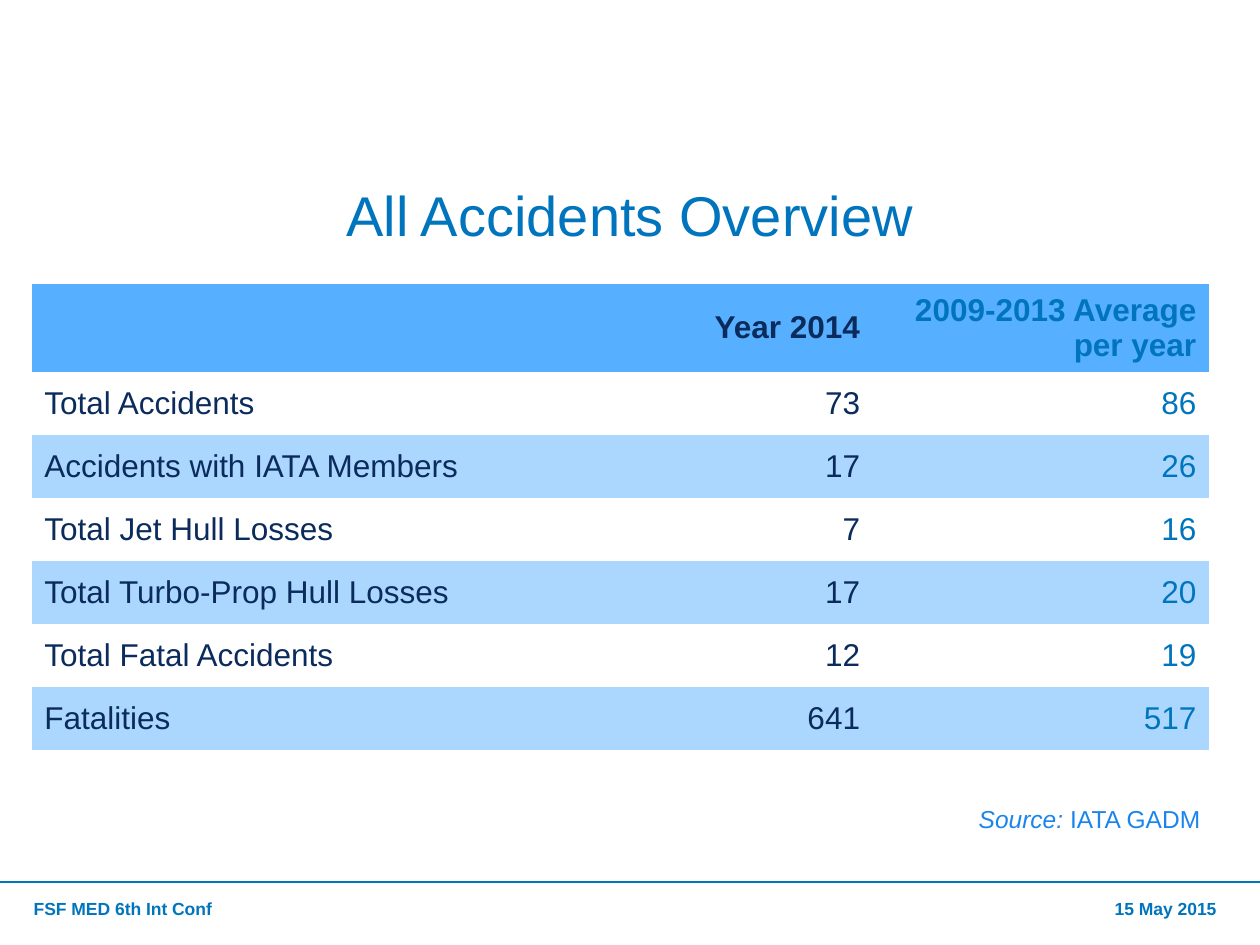
from pptx import Presentation
from pptx.dml.color import RGBColor
from pptx.enum.shapes import MSO_CONNECTOR
from pptx.enum.text import MSO_ANCHOR, PP_ALIGN
from pptx.oxml.ns import qn
from pptx.util import Cm, Pt
from lxml import etree

LEFT, CENTER, RIGHT = PP_ALIGN.LEFT, PP_ALIGN.CENTER, PP_ALIGN.RIGHT
TOP, MIDDLE = MSO_ANCHOR.TOP, MSO_ANCHOR.MIDDLE
STRAIGHT = MSO_CONNECTOR.STRAIGHT

BLUE = RGBColor(0x00, 0x75, 0xBD)
NAVY = RGBColor(0x0B, 0x2B, 0x5C)
SOURCE_BLUE = RGBColor(0x1B, 0x85, 0xEC)
HEADER_FILL = RGBColor(0x57, 0xB0, 0xFF)
BAND_FILL = RGBColor(0xAB, 0xD7, 0xFF)
WHITE = RGBColor(0xFF, 0xFF, 0xFF)

TITLE = "All Accidents Overview"
ACCIDENTS = [
    ("", "Year 2014", "2009-2013 Average per year"),
    ("Total Accidents", "73", "86"),
    ("Accidents with IATA Members", "17", "26"),
    ("Total Jet Hull Losses", "7", "16"),
    ("Total Turbo-Prop Hull Losses", "17", "20"),
    ("Total Fatal Accidents", "12", "19"),
    ("Fatalities", "641", "517"),
]
COLUMNS = [(9.96, LEFT, NAVY), (6.99, RIGHT, NAVY), (6.78, RIGHT, BLUE)]
HEADER_HEIGHT, ROW_HEIGHT = 1.5, 1.27
SOURCE = [("Source: ", True), ("IATA GADM", False)]
CONFERENCE, DATE = "FSF MED 6th Int Conf", "15 May 2015"

SLIDE_WIDTH, SLIDE_HEIGHT = 25.4, 19.05
RULE_Y, FOOTER_Y, FOOTER_HEIGHT = 17.78, 17.98, 0.64


def write(frame, text, size, color, align=LEFT, bold=False):
    """Fill the first paragraph; text is a string or (text, italic) runs."""
    paragraph = frame.paragraphs[0]
    paragraph.alignment = align
    for words, italic in [(text, False)] if isinstance(text, str) else text:
        run = paragraph.add_run()
        run.text = words
        font = run.font
        font.name, font.size = "Arial", Pt(size)
        font.bold, font.italic = bold, italic
        font.color.rgb = color


def add_text(slide, box, text, size, color, inset_top=0.13, **text_format):
    frame = slide.shapes.add_textbox(*map(Cm, box)).text_frame
    frame.word_wrap = True
    frame.vertical_anchor = TOP
    frame.margin_top = Cm(inset_top)
    write(frame, text, size, color, **text_format)


def add_accident_table(slide, left, top):
    width = sum(column[0] for column in COLUMNS)
    height = HEADER_HEIGHT + ROW_HEIGHT * (len(ACCIDENTS) - 1)
    table = slide.shapes.add_table(
        len(ACCIDENTS), len(COLUMNS), Cm(left), Cm(top), Cm(width), Cm(height)
    ).table
    for column, (column_width, _, _) in zip(table.columns, COLUMNS):
        column.width = Cm(column_width)
    for r, record in enumerate(ACCIDENTS):
        is_header = r == 0
        table.rows[r].height = Cm(HEADER_HEIGHT if is_header else ROW_HEIGHT)
        fill = HEADER_FILL if is_header else (WHITE if r % 2 else BAND_FILL)
        for c, (value, (_, align, color)) in enumerate(zip(record, COLUMNS)):
            cell = table.cell(r, c)
            cell.fill.solid()
            cell.fill.fore_color.rgb = fill
            cell.vertical_anchor = MIDDLE
            write(cell.text_frame, value, 18, color, align=align, bold=is_header)
            # No borders between the bands
            properties = cell._tc.get_or_add_tcPr()
            for i, side in enumerate(("a:lnL", "a:lnR", "a:lnT", "a:lnB")):
                border = etree.Element(qn(side), w="0")
                etree.SubElement(border, qn("a:noFill"))
                properties.insert(i, border)


def add_footer_rule(slide):
    rule = slide.shapes.add_connector(
        STRAIGHT, Cm(0), Cm(RULE_Y), Cm(SLIDE_WIDTH), Cm(RULE_Y)
    )
    rule.line.color.rgb = BLUE
    rule.line.width = Pt(1.5)
    etree.SubElement(rule._element.spPr, qn("a:effectLst"))


def main():
    presentation = Presentation()
    presentation.slide_width = Cm(SLIDE_WIDTH)
    presentation.slide_height = Cm(SLIDE_HEIGHT)
    slide = presentation.slides.add_slide(presentation.slide_layouts[6])

    add_footer_rule(slide)
    add_text(slide, (0, 3.38, SLIDE_WIDTH, 2.74), TITLE, 32, BLUE,
             inset_top=0.25, align=CENTER)
    add_accident_table(slide, 0.64, 5.72)
    add_text(slide, (19.48, 16.08, 5.28, 0.86), SOURCE, 14, SOURCE_BLUE)
    add_text(slide, (0.43, FOOTER_Y, 8.69, FOOTER_HEIGHT), CONFERENCE, 10, BLUE,
             bold=True)
    add_text(slide, (16.31, FOOTER_Y, 8.46, FOOTER_HEIGHT), DATE, 10, BLUE,
             align=RIGHT, bold=True)
    presentation.save("out.pptx")


if __name__ == "__main__":
    main()
